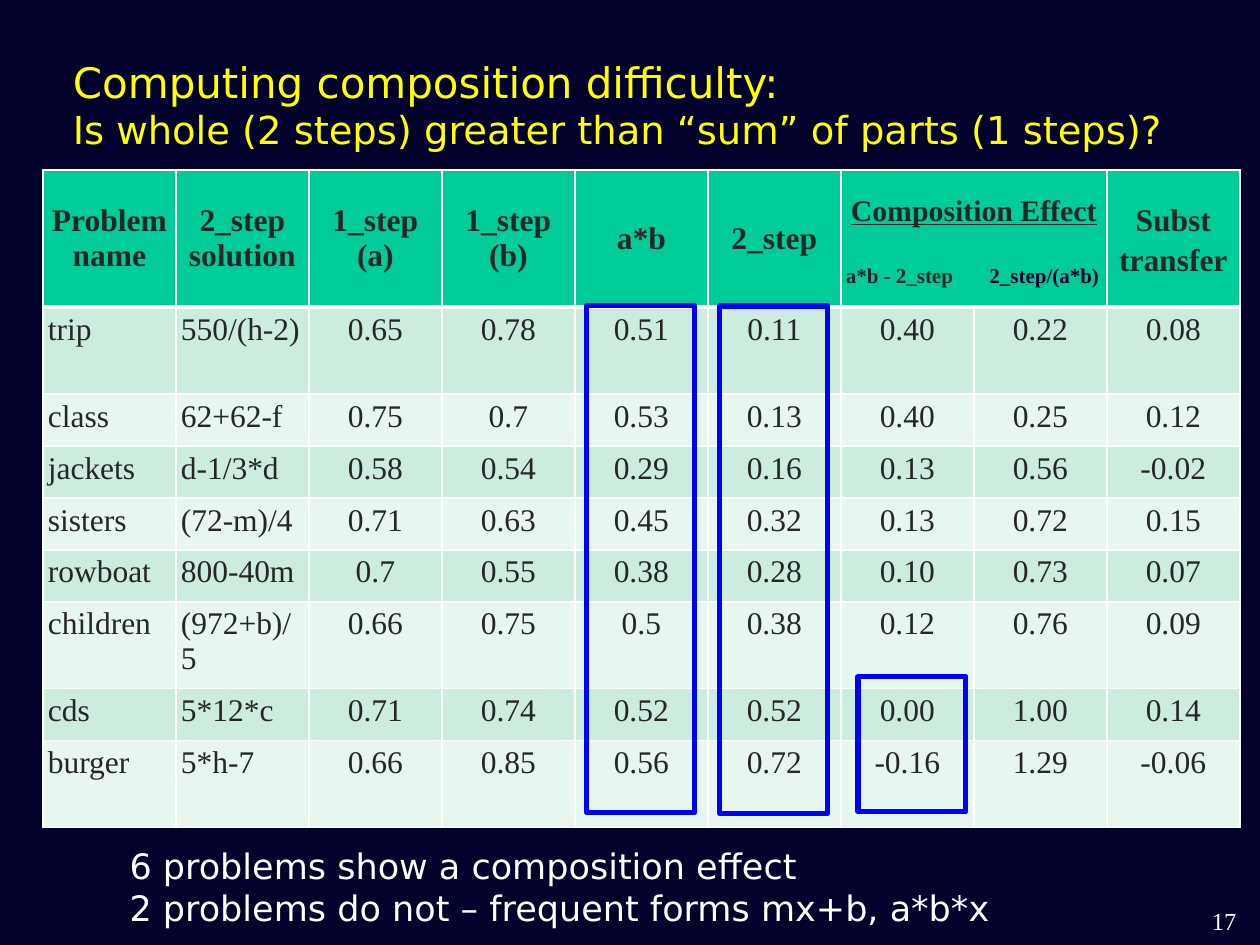
from dataclasses import dataclass

from lxml import etree
from pptx import Presentation
from pptx import util as u
from pptx.dml.color import RGBColor
from pptx.enum import shapes, text
from pptx.oxml.ns import qn

WIDTH, HEIGHT = u.Inches(10), u.Inches(7.5)
SANS, SERIF = "DejaVu Sans", "Times New Roman"
NAVY, WHITE, YELLOW, BLUE, INK = "01012C", "FFFFFF", "FFFF00", "0000FF", "262626"
HEADER_FILL, BAND_FILLS = "00CC99", ("E7F6EF", "CCECDE")
TABLE_LEFT, TABLE_TOP, TABLE_WIDTH, COLUMNS = 0.034, 0.18, 0.95, 9
COLUMN_SHARE = TABLE_WIDTH / COLUMNS
HEADER_HEIGHT, TALL_ROW, SHORT_ROW = 0.145, 0.092, 0.055
TALL_PROBLEMS = ("trip", "children", "burger")
PROBLEMS = (
    ("trip", "550/(h-2)", "0.65", "0.78", "0.51", "0.11", "0.40", "0.22", "0.08"),
    ("class", "62+62-f", "0.75", "0.7", "0.53", "0.13", "0.40", "0.25", "0.12"),
    ("jackets", "d-1/3*d", "0.58", "0.54", "0.29", "0.16", "0.13", "0.56", "-0.02"),
    ("sisters", "(72-m)/4", "0.71", "0.63", "0.45", "0.32", "0.13", "0.72", "0.15"),
    ("rowboat", "800-40m", "0.7", "0.55", "0.38", "0.28", "0.10", "0.73", "0.07"),
    ("children", "(972+b)/5", "0.66", "0.75", "0.5", "0.38", "0.12", "0.76", "0.09"),
    ("cds", "5*12*c", "0.71", "0.74", "0.52", "0.52", "0.00", "1.00", "0.14"),
    ("burger", "5*h-7", "0.66", "0.85", "0.56", "0.72", "-0.16", "1.29", "-0.06"),
)


@dataclass(frozen=True)
class Run:
    """A stretch of text in one style."""
    words: str
    size: float = 18
    color: str = INK
    font: str = SERIF
    bold: bool = False
    underline: bool = False


@dataclass(frozen=True)
class Line:
    """A paragraph of runs with its alignment and spacing."""
    runs: tuple[Run, ...]
    centred: bool = False
    spacing: float = 1.0
    before: float = 0
    tab: float = 0


@dataclass(frozen=True)
class TextBlock:
    """A text box placed in shares of the slide."""
    left: float
    top: float
    width: float
    height: float
    lines: tuple[Line, ...]
    middle: bool = False


@dataclass(frozen=True)
class Highlight:
    """A frame placed by table column and by share of the slide's height."""
    column: float
    top: float
    height: float
    columns: float = 0.81


def heading(words: str, spacing: float = 1.0) -> Line:
    """Return a centred bold header line."""
    return Line((Run(words, bold=True),), centred=True, spacing=spacing)


HEADINGS = {
    0: (heading("Problem name"),),
    1: (heading("2_step solution"),),
    2: (heading("1_step"), heading("(a)")),
    3: (heading("1_step"), heading("(b)")),
    4: (heading("a*b"),),
    5: (heading("2_step"),),
    6: (Line((Run("Composition Effect", 17, bold=True, underline=True),), True, 1.15),
        Line((Run("a*b - 2_step\t", 12, bold=True),
              Run("2_step/(a*b)", 12, NAVY, bold=True)), before=21, tab=1.14)),
    8: (heading("Subst transfer", 1.15),),
}
TITLE = TextBlock(0.048, 0.027, 0.902, 0.167, (Line((
    Run("Computing composition difficulty: \n", 24, YELLOW, SANS),
    Run("Is whole (2 steps) greater than “sum” of parts (1 steps)?", 22, YELLOW, SANS),
)),), middle=True)
PAGE_NUMBER = TextBlock(0.952, 0.952, 0.069, 0.045, (Line((Run("17", 14, WHITE),)),))
FINDINGS = TextBlock(0.093, 0.887, 0.864, 0.103, tuple(
    Line((Run(words, 20, WHITE, SANS),)) for words in (
        "6 problems show a composition effect",
        "2 problems do not – frequent forms mx+b, a*b*x")))
COLUMN_HIGHLIGHTS = (Highlight(4.09, 0.323, 0.537), Highlight(5.09, 0.324, 0.537))
NO_EFFECT_HIGHLIGHT = Highlight(6.13, 0.716, 0.143)


def across(share: float) -> int:
    """Convert a share of the slide's width to a length."""
    return round(WIDTH * share)


def down(share: float) -> int:
    """Convert a share of the slide's height to a length."""
    return round(HEIGHT * share)


def rgb(color: str) -> RGBColor:
    """Convert a hex string to a colour."""
    return RGBColor.from_string(color)


def write_lines(frame, lines: tuple[Line, ...]) -> None:
    """Write paragraphs into a text frame run by run."""
    for index, line in enumerate(lines):
        paragraph = frame.add_paragraph() if index else frame.paragraphs[0]
        paragraph.alignment = text.PP_ALIGN.CENTER if line.centred else text.PP_ALIGN.LEFT
        paragraph.line_spacing = line.spacing
        paragraph.space_before = u.Pt(line.before)
        if line.tab:
            tabs = etree.SubElement(paragraph._p.get_or_add_pPr(), qn("a:tabLst"))
            etree.SubElement(tabs, qn("a:tab"), pos=str(u.Inches(line.tab)), algn="l")
        for item in line.runs:
            run = paragraph.add_run()
            run.text = item.words.rstrip("\n")
            run.font.size = u.Pt(item.size)
            run.font.name = item.font
            run.font.bold = item.bold
            run.font.underline = item.underline
            run.font.color.rgb = rgb(item.color)
            if item.words.endswith("\n"):
                paragraph.add_line_break()


def add_text(slide, block: TextBlock) -> None:
    """Add a text box."""
    shape = slide.shapes.add_textbox(across(block.left), down(block.top),
                                     across(block.width), down(block.height))
    frame = shape.text_frame
    frame.word_wrap = True
    frame.vertical_anchor = text.MSO_ANCHOR.MIDDLE if block.middle else text.MSO_ANCHOR.TOP
    write_lines(frame, block.lines)


def style_cell(cell, fill: str, top: float, bottom: float) -> None:
    """Set a cell's margins, fill and white borders."""
    cell.margin_left = cell.margin_right = u.Inches(0.04)
    cell.margin_top = cell.margin_bottom = u.Inches(0.04)
    cell.fill.solid()
    cell.fill.fore_color.rgb = rgb(fill)
    properties = cell._tc.get_or_add_tcPr()
    sides = (("a:lnL", 1), ("a:lnR", 1), ("a:lnT", top), ("a:lnB", bottom))
    for index, (side, points) in enumerate(sides):
        border = etree.Element(qn(side), w=str(u.Pt(points)))
        solid = etree.SubElement(border, qn("a:solidFill"))
        etree.SubElement(solid, qn("a:srgbClr"), val=WHITE)
        properties.insert(index, border)


def add_results_table(slide) -> None:
    """Add the table of problems under its header row."""
    heights = [HEADER_HEIGHT] + [
        TALL_ROW if problem[0] in TALL_PROBLEMS else SHORT_ROW for problem in PROBLEMS]
    table = slide.shapes.add_table(
        len(heights), COLUMNS, across(TABLE_LEFT), down(TABLE_TOP),
        across(TABLE_WIDTH), down(sum(heights))).table
    for column in table.columns:
        column.width = across(COLUMN_SHARE)
    for row, height in zip(table.rows, heights):
        row.height = down(height)
    table.cell(0, 6).merge(table.cell(0, 7))
    for column in range(COLUMNS):
        cell = table.cell(0, column)
        style_cell(cell, HEADER_FILL, 1, 3)
        cell.vertical_anchor = text.MSO_ANCHOR.MIDDLE
        write_lines(cell.text_frame, HEADINGS.get(column, ()))
    for row, problem in enumerate(PROBLEMS, 1):
        for column, words in enumerate(problem):
            cell = table.cell(row, column)
            style_cell(cell, BAND_FILLS[row % 2], 3 if row == 1 else 1, 1)
            write_lines(cell.text_frame, (Line((Run(words),), centred=column > 1),))


def add_highlight(slide, highlight: Highlight) -> None:
    """Add an unfilled blue frame over table cells."""
    shape = slide.shapes.add_shape(
        shapes.MSO_SHAPE.RECTANGLE,
        across(TABLE_LEFT + highlight.column * COLUMN_SHARE), down(highlight.top),
        across(highlight.columns * COLUMN_SHARE), down(highlight.height))
    shape.shadow.inherit = False
    shape.fill.background()
    shape.line.color.rgb = rgb(BLUE)
    shape.line.width = u.Pt(3)


def main() -> None:
    """Build and save the slide."""
    presentation = Presentation()
    presentation.slide_width, presentation.slide_height = WIDTH, HEIGHT
    slide = presentation.slides.add_slide(presentation.slide_layouts[6])
    slide.background.fill.solid()
    slide.background.fill.fore_color.rgb = rgb(NAVY)
    add_text(slide, PAGE_NUMBER)
    add_text(slide, TITLE)
    add_results_table(slide)
    for highlight in COLUMN_HIGHLIGHTS:
        add_highlight(slide, highlight)
    add_text(slide, FINDINGS)
    add_highlight(slide, NO_EFFECT_HIGHLIGHT)
    presentation.save("out.pptx")


if __name__ == "__main__":
    main()
